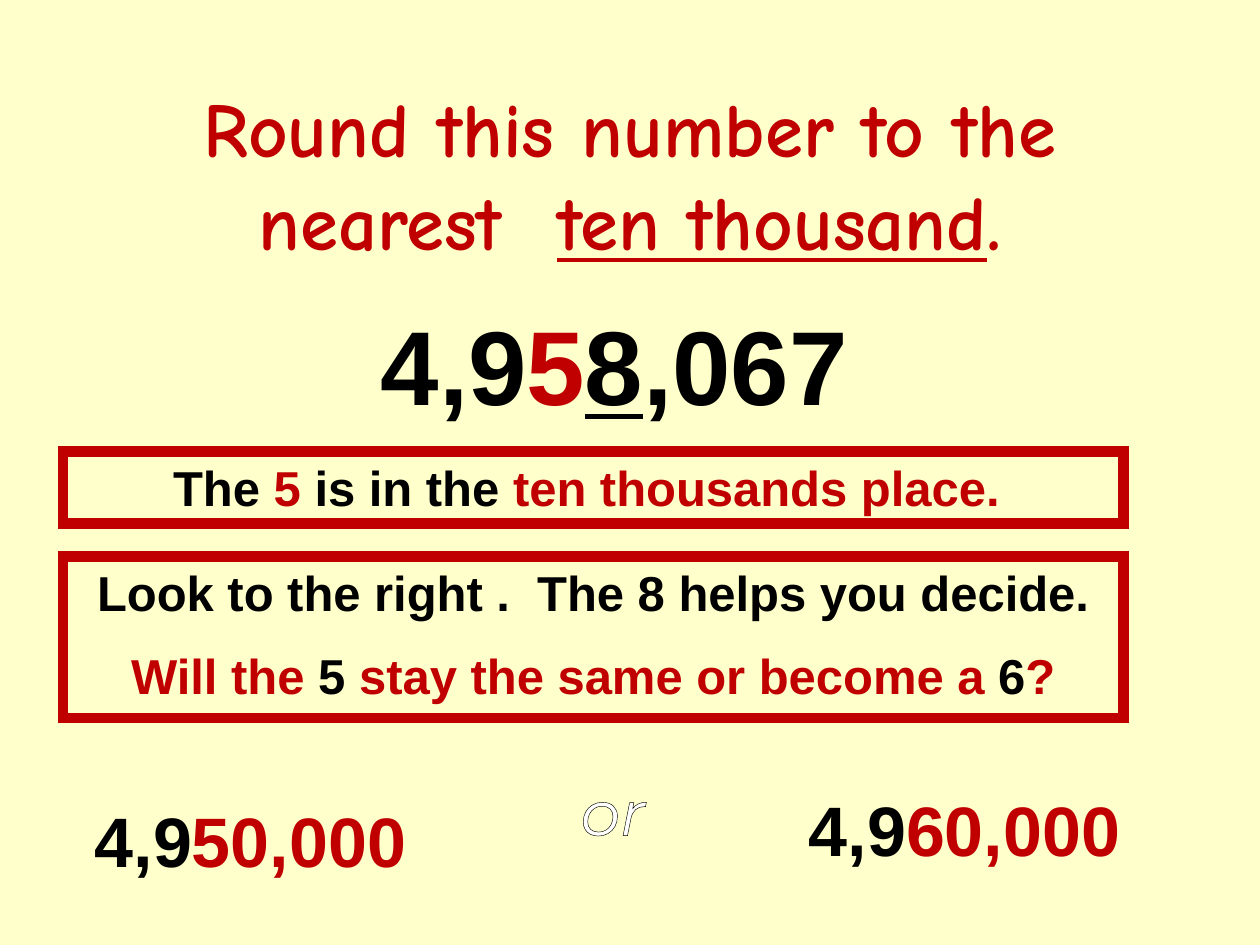
import pptx
import pptx.util
import pptx.dml.color
import pptx.enum.text
import pptx.enum.shapes
import pptx.oxml
import pptx.oxml.ns
from dataclasses import dataclass

PX = 9525


@dataclass(frozen=True)
class Theme:
    """Colours, fonts and type sizes of the slide."""
    paper: str = "FFFFCC"
    ink: str = "000000"
    accent: str = "C00000"
    white: str = "FFFFFF"
    title_font: str = "Comic Neue"
    body_font: str = "Arial"
    or_font: str = "Montserrat"
    title: int = 44
    number: int = 60
    answer: int = 40
    choice: int = 36
    hint: int = 28
    hint_gap: int = 14
    border: int = 6


THEME = Theme()
CENTER = pptx.enum.text.PP_ALIGN.CENTER
LEFT = pptx.enum.text.PP_ALIGN.LEFT
NAMESPACE = pptx.oxml.ns.nsdecls("a")


def colour(value):
    """Turn a hex string into an RGB colour."""
    return pptx.dml.color.RGBColor.from_string(value)


def emu(box):
    """Turn a box in px into EMU lengths."""
    return [pptx.util.Emu(length * PX) for length in box]


def write(paragraph, text, size, font=THEME.body_font, color=THEME.ink,
          bold=True, italic=False, underline=False, outline=None):
    """Append a formatted run to a paragraph."""
    run = paragraph.add_run()
    run.text = text
    run.font.size = pptx.util.Pt(size)
    run.font.name = font
    run.font.bold = bold
    run.font.italic = italic
    run.font.underline = underline
    run.font.color.rgb = colour(color)
    if outline:
        run.font._element.insert(0, pptx.oxml.parse_xml(
            f'<a:ln {NAMESPACE} w="9525"><a:solidFill>'
            f'<a:srgbClr val="{outline}"/></a:solidFill></a:ln>'))


def text_area(slide, box, align=CENTER, side_margin=10, middle=False):
    """Add a text box and return its first paragraph."""
    frame = slide.shapes.add_textbox(*emu(box)).text_frame
    frame.word_wrap = True
    frame.margin_left = frame.margin_right = pptx.util.Emu(side_margin * PX)
    anchor = pptx.enum.text.MSO_ANCHOR
    frame.vertical_anchor = anchor.MIDDLE if middle else anchor.TOP
    frame.paragraphs[0].alignment = align
    return frame.paragraphs[0]


def add_title(slide, box):
    """Place the rounding task."""
    task = text_area(slide, box, middle=True)
    for text, underline in (("Round this number to the nearest  ", False),
                            ("ten thousand", True), (".", False)):
        write(task, text, THEME.title, font=THEME.title_font,
              color=THEME.accent, underline=underline)


def add_number(slide, box):
    """Place the number with its rounding digit and its neighbour marked."""
    number = text_area(slide, box)
    write(number, "4,9", THEME.number)
    write(number, "5", THEME.number, color=THEME.accent)
    write(number, "8", THEME.number, underline=True)
    write(number, ",067", THEME.number)


def add_hint(slide, box, lines):
    """Place a square-cornered hint of lines listing text and colour."""
    hint = slide.shapes.add_shape(
        pptx.enum.shapes.MSO_SHAPE.RECTANGLE, *emu(box))
    hint.shadow.inherit = False
    hint.fill.background()
    hint.line.color.rgb = colour(THEME.accent)
    hint.line.width = pptx.util.Pt(THEME.border)
    hint.line._get_or_add_ln().append(
        pptx.oxml.parse_xml(f'<a:miter {NAMESPACE} lim="800000"/>'))
    frame = hint.text_frame
    frame.word_wrap = True
    frame.vertical_anchor = pptx.enum.text.MSO_ANCHOR.TOP
    for index, line in enumerate(lines):
        paragraph = frame.add_paragraph() if index else frame.paragraphs[0]
        paragraph.alignment = CENTER
        paragraph.space_before = pptx.util.Pt(THEME.hint_gap if index else 0)
        for text, color in line:
            write(paragraph, text, THEME.hint, color=color)


def add_answer(slide, box, rounded):
    """Place one possible answer with its rounded digits in the accent."""
    answer = text_area(slide, box, align=LEFT)
    write(answer, " ", THEME.number)
    write(answer, "4,9", THEME.answer)
    write(answer, rounded, THEME.answer, color=THEME.accent)
    write(answer, " ", THEME.number)


def add_choice(slide, box):
    """Place the outlined word between the answers."""
    write(text_area(slide, box, side_margin=0), "or", THEME.choice,
          font=THEME.or_font, color=THEME.white, bold=False, italic=True,
          outline=THEME.ink)


def main():
    """Build the rounding slide and save it."""
    deck = pptx.Presentation()
    deck.slide_width, deck.slide_height = emu((960, 720))
    slide = deck.slides.add_slide(deck.slide_layouts[6])
    slide.background.fill.solid()
    slide.background.fill.fore_color.rgb = colour(THEME.paper)
    ink, accent = THEME.ink, THEME.accent

    add_title(slide, (48, 72, 864, 120))
    add_number(slide, (160, 224, 616, 107))
    add_choice(slide, (438, 584, 58, 68))
    add_answer(slide, (40, 576, 288, 107), "50,000")
    add_answer(slide, (584, 568, 296, 107), "60,000")
    add_hint(slide, (48, 344, 808, 55), [
        [("The ", ink), ("5", accent), (" is in the ", ink),
         ("ten thousands place. ", accent)]])
    add_hint(slide, (48, 424, 808, 123), [
        [("Look to the right .  The 8 helps you decide.", ink)],
        [("Will the ", accent), ("5 ", ink),
         ("stay the same or become a ", accent), ("6", ink), ("?", accent)]])
    deck.save("out.pptx")


if __name__ == "__main__":
    main()
